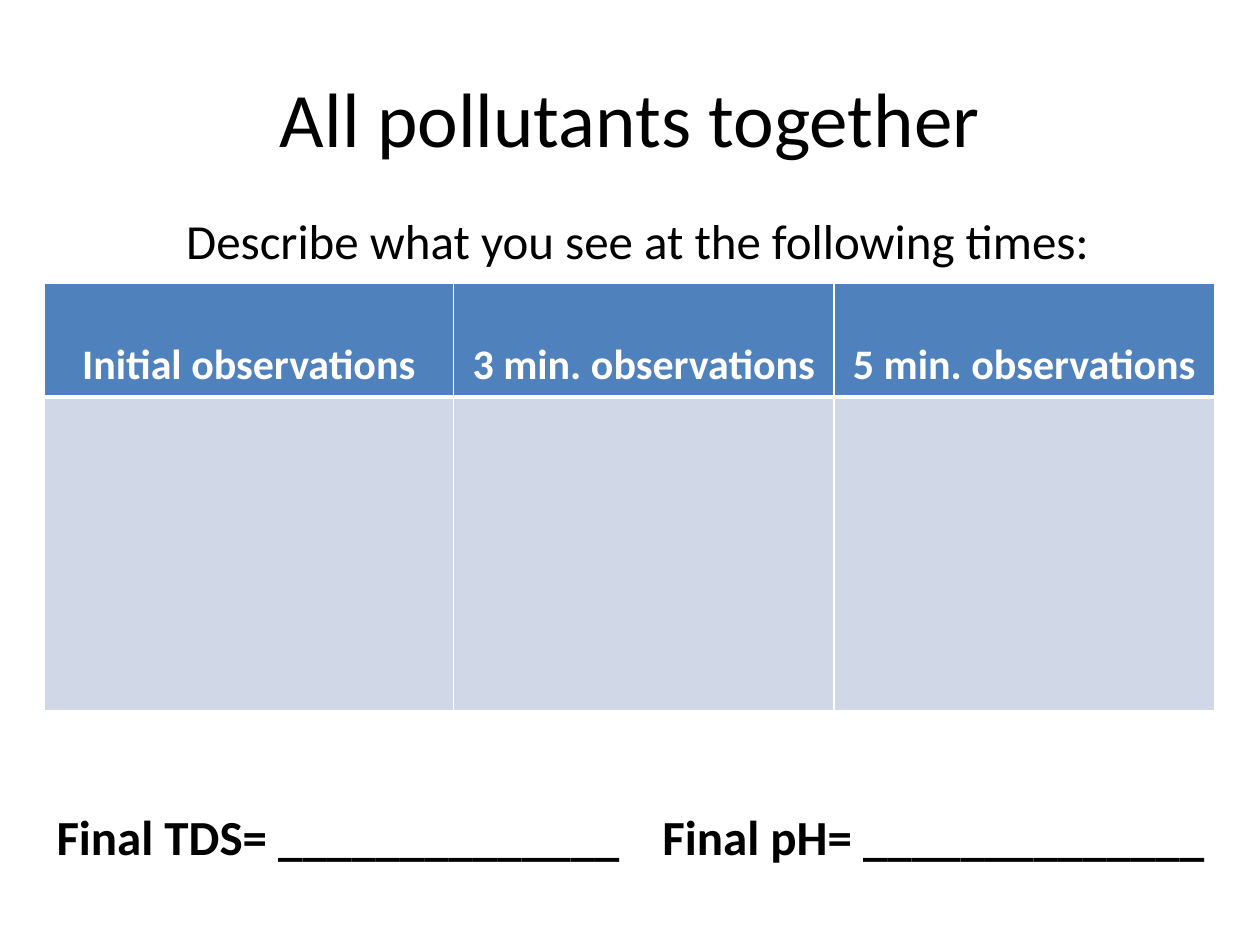
from lxml import etree
from pptx import Presentation
from pptx.dml.color import RGBColor
from pptx.enum.text import MSO_ANCHOR, PP_ALIGN
from pptx.oxml.ns import qn
from pptx.util import Inches, Pt

CENTER = PP_ALIGN.CENTER
LEFT = PP_ALIGN.LEFT
TOP = MSO_ANCHOR.TOP
MIDDLE = MSO_ANCHOR.MIDDLE
BOTTOM = MSO_ANCHOR.BOTTOM

BLACK = RGBColor(0x00, 0x00, 0x00)
WHITE = RGBColor(0xFF, 0xFF, 0xFF)
HEADER_BLUE = RGBColor(0x4F, 0x81, 0xBD)
PALE_BLUE = RGBColor(0xD0, 0xD8, 0xE8)

FONT = "Calibri"
HEADERS = ["Initial observations", "3 min. observations", "5 min. observations"]
COLUMN_WIDTHS = [3.25, 3.02, 3.02]
ROW_HEIGHTS = [0.9, 2.49]
BLANK_LINE = "_" * 14


def write_text(frame, text, size=28, color=BLACK, bold=False, align=LEFT):
    para = frame.paragraphs[0]
    para.alignment = align
    span = para.add_run()
    span.text = text
    span.font.name = FONT
    span.font.size = Pt(size)
    span.font.bold = bold
    span.font.color.rgb = color


def add_text(page, text, left, top, width, height, anchor=TOP, wrap=True, **style):
    box = page.shapes.add_textbox(
        Inches(left), Inches(top), Inches(width), Inches(height))
    frame = box.text_frame
    frame.word_wrap = wrap
    frame.vertical_anchor = anchor
    write_text(frame, text, **style)


def set_borders(cell, color, **widths):
    properties = cell._tc.get_or_add_tcPr()
    for side in "LRTB":
        line = etree.SubElement(
            properties, qn(f"a:ln{side}"), w=str(Pt(widths.get(side, 1))))
        fill = etree.SubElement(line, qn("a:solidFill"))
        etree.SubElement(fill, qn("a:srgbClr"), val=str(color))


def fill_cell(cell, color):
    cell.fill.solid()
    cell.fill.fore_color.rgb = color


def add_observation_table(page, left, top):
    table = page.shapes.add_table(
        len(ROW_HEIGHTS), len(COLUMN_WIDTHS), Inches(left), Inches(top),
        Inches(sum(COLUMN_WIDTHS)), Inches(sum(ROW_HEIGHTS))).table
    for row, height in zip(table.rows, ROW_HEIGHTS):
        row.height = Inches(height)
    for index, (header, width) in enumerate(zip(HEADERS, COLUMN_WIDTHS)):
        table.columns[index].width = Inches(width)
        header_cell = table.cell(0, index)
        answer_cell = table.cell(1, index)
        set_borders(header_cell, WHITE, B=3)
        set_borders(answer_cell, WHITE, T=3)
        fill_cell(header_cell, HEADER_BLUE)
        fill_cell(answer_cell, PALE_BLUE)
        header_cell.vertical_anchor = BOTTOM
        write_text(header_cell.text_frame, header, size=24, color=WHITE,
                   bold=True, align=CENTER)


def main():
    deck = Presentation()
    deck.slide_width = Inches(10)
    deck.slide_height = Inches(7.5)
    page = deck.slides.add_slide(deck.slide_layouts[6])

    add_text(page, "All pollutants together", 0.5, 0.3, 9, 1.25,
             anchor=MIDDLE, size=44, align=CENTER)
    add_observation_table(page, 0.35, 2.25)
    add_text(page, "Describe what you see at the following times:",
             1.38, 1.62, 7.44, 0.57, wrap=False)
    add_text(page, f"Final TDS= {BLANK_LINE}", 0.35, 6.35, 4.88, 0.57, bold=True)
    add_text(page, f"Final pH= {BLANK_LINE}", 5.16, 6.35, 4.56, 0.57,
             wrap=False, bold=True)

    deck.save("out.pptx")


if __name__ == "__main__":
    main()
